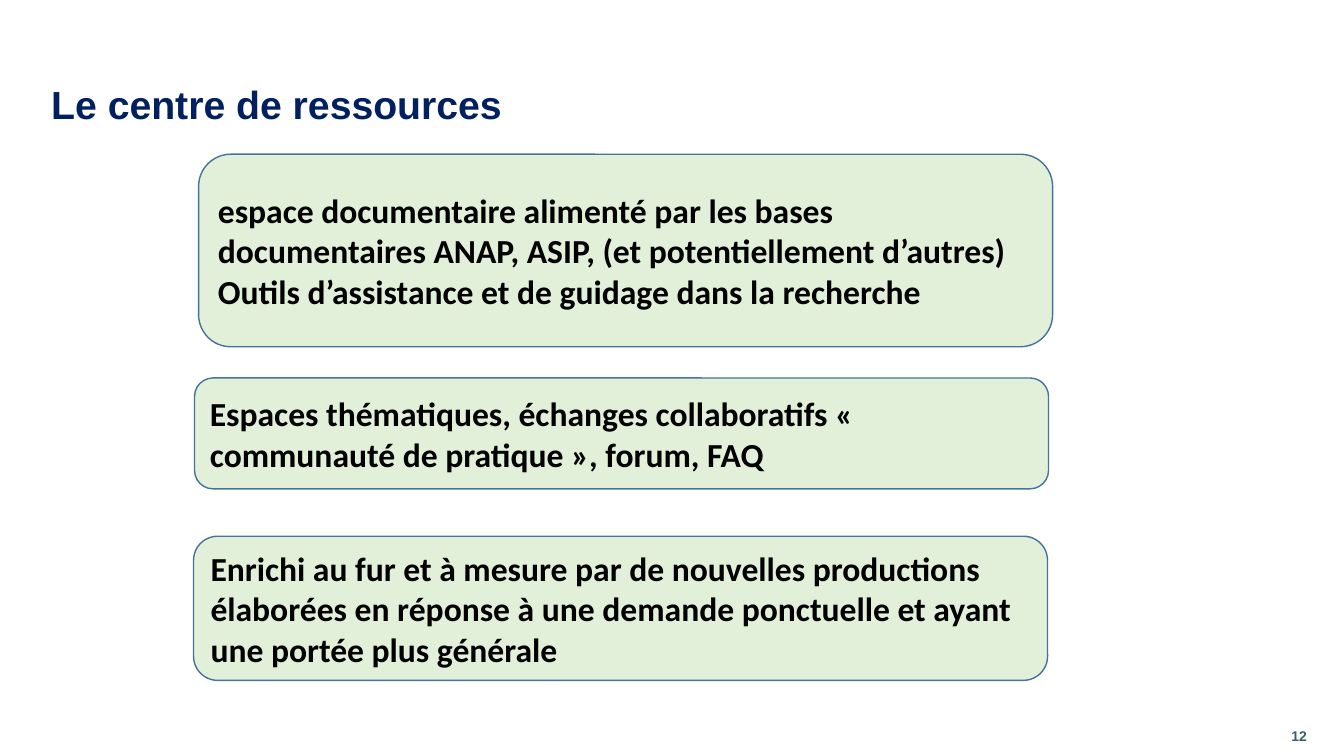
from pptx import Presentation
from pptx.dml.color import RGBColor
from pptx.enum import shapes, text
from pptx.util import Inches, Pt

NAVY = RGBColor(0x00, 0x20, 0x60)
TEAL = RGBColor(0x36, 0x61, 0x6C)
BLACK = RGBColor(0x00, 0x00, 0x00)
PALE_GREEN = RGBColor(0xE2, 0xF0, 0xD9)
BLUE = RGBColor(0x43, 0x73, 0x9E)

CARD_WIDTH = 8.47
CARDS = [  # left, top, height, paragraphs
    (1.97, 1.53, 1.91, [
        "espace documentaire alimenté par les bases documentaires ANAP, ASIP, "
        "(et potentiellement d’autres)",
        "Outils d’assistance et de guidage dans la recherche"]),
    (1.93, 3.75, 1.1, [
        "Espaces thématiques, échanges collaboratifs "
        "« communauté de pratique », forum, FAQ"]),
    (1.92, 5.32, 1.43, [
        "Enrichi au fur et à mesure par de nouvelles productions élaborées en "
        "réponse à une demande ponctuelle et ayant une portée plus générale"]),
]


def write(sp, lines, font, size, color):
    """Fill a shape with bold, left-aligned, vertically centred paragraphs."""
    tf = sp.text_frame
    tf.word_wrap = True
    tf.vertical_anchor = text.MSO_ANCHOR.MIDDLE
    tf.text = "\n".join(lines)
    for p in tf.paragraphs:
        p.alignment = text.PP_ALIGN.LEFT
        p.font.name = font
        p.font.size = Pt(size)
        p.font.bold = True
        p.font.color.rgb = color


def add_label(s, left, top, width, height, line, size, color):
    sp = s.shapes.add_textbox(Inches(left), Inches(top), Inches(width), Inches(height))
    write(sp, [line], "Arial", size, color)


def add_card(s, left, top, height, lines):
    sp = s.shapes.add_shape(shapes.MSO_SHAPE.ROUNDED_RECTANGLE, Inches(left),
                            Inches(top), Inches(CARD_WIDTH), Inches(height))
    sp.shadow.inherit = False
    sp.fill.solid()
    sp.fill.fore_color.rgb = PALE_GREEN
    sp.line.color.rgb = BLUE
    sp.line.width = Pt(1)
    write(sp, lines, "Calibri", 24, BLACK)


def main():
    prs = Presentation()
    prs.slide_width, prs.slide_height = Inches(13.33), Inches(7.5)
    s = prs.slides.add_slide(prs.slide_layouts[6])
    add_label(s, 12.71, 7.1, 0.62, 0.4, "12", 10, TEAL)
    add_label(s, 0.41, 0.78, 12.73, 0.49, "Le centre de ressources", 28, NAVY)
    for card in CARDS:
        add_card(s, *card)
    prs.save("out.pptx")


if __name__ == "__main__":
    main()
